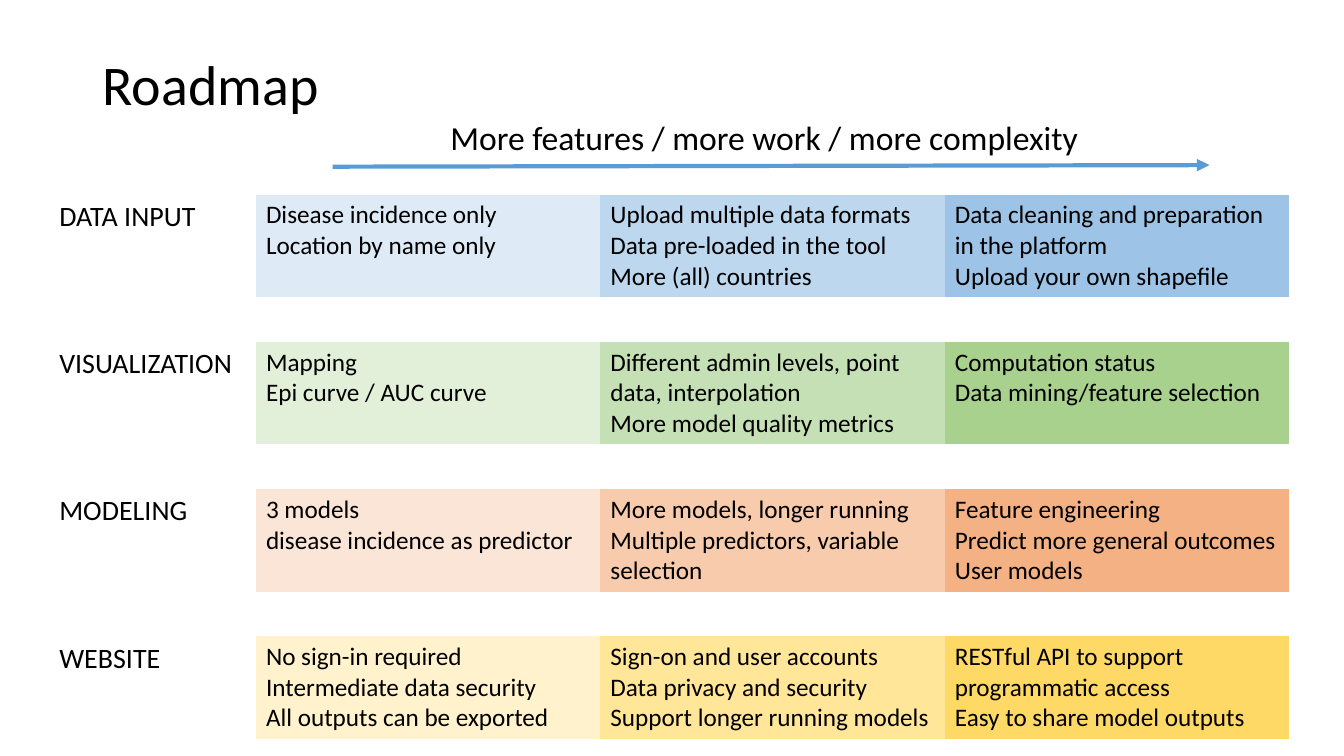
import pptx
import pptx.dml.color
import pptx.enum.shapes
import pptx.enum.text
import pptx.oxml.ns
import pptx.util
from lxml import etree

Cm, Pt = pptx.util.Cm, pptx.util.Pt
qn = pptx.oxml.ns.qn

# Content: label, then (fill, paragraphs) for each stage; \n is a line break
TITLE = "Roadmap"
ARROW_LABEL = "More features / more work / more complexity"
TRACKS = [
    ("DATA INPUT", [
        ("DEEBF7", ["Disease incidence only", "Location by name only"]),
        ("BDD7EE", ["Upload multiple data formats", "Data pre-loaded in the tool",
                    "More (all) countries"]),
        ("9DC3E6", ["Data cleaning and preparation in the platform",
                    "Upload your own shapefile"]),
    ]),
    ("VISUALIZATION", [
        ("E2F0D9", ["Mapping", "Epi curve / AUC curve"]),
        ("C5E0B4", ["Different admin levels, point data, interpolation",
                    "More model quality metrics"]),
        ("A9D18E", ["Computation status", "Data mining/feature selection"]),
    ]),
    ("MODELING", [
        ("FBE5D6", ["3 models\ndisease incidence as predictor"]),
        ("F8CBAD", ["More models, longer running",
                    "Multiple predictors, variable selection"]),
        ("F4B183", ["Feature engineering", "Predict more general outcomes",
                    "User models"]),
    ]),
    ("WEBSITE", [
        ("FFF2CC", ["No sign-in required", "Intermediate data security",
                    "All outputs can be exported"]),
        ("FFE699", ["Sign-on and user accounts", "Data privacy and security",
                    "Support longer running models"]),
        ("FFD966", ["RESTful API to support programmatic access",
                    "Easy to share model outputs"]),
    ]),
]

# Layout in cm
TABLE_LEFT, TABLE_TOP = 1.24, 4.91
LABEL_W, STAGE_W, STAGES = 5.21, 8.68, 3
TRACK_H, GAP_H = 2.58, 1.13
NO_STYLE = "{2D5ABB26-0587-4C30-8999-92F81FD0307C}"


def color(value):
    return pptx.dml.color.RGBColor.from_string(value)


def write(tf, paragraphs, size):
    for i, text in enumerate(paragraphs):
        p = tf.add_paragraph() if i else tf.paragraphs[0]
        for j, line in enumerate(text.split("\n")):
            if j:
                p.add_line_break()
            r = p.add_run()
            r.text = line
            r.font.name = "Calibri"
            r.font.size = Pt(size)
            r.font.color.rgb = color("000000")


def add_text(s, left, top, width, height, text, size):
    tf = s.shapes.add_textbox(Cm(left), Cm(top), Cm(width), Cm(height)).text_frame
    tf.word_wrap = True
    write(tf, [text], size)
    return tf


def add_arrow(s):
    arrow = s.shapes.add_connector(pptx.enum.shapes.MSO_CONNECTOR.STRAIGHT,
                                   Cm(8.38), Cm(4.2), Cm(30.48), Cm(4.16))
    arrow.line.color.rgb = color("5B9BD5")
    arrow.line.width = Pt(3)
    etree.SubElement(arrow.line._get_or_add_ln(), qn("a:tailEnd"), type="triangle")
    etree.SubElement(arrow._element.spPr, qn("a:effectLst"))


def add_tracks(s):
    rows = 2 * len(TRACKS) - 1
    widths = [LABEL_W] + [STAGE_W] * STAGES
    heights = [GAP_H if i % 2 else TRACK_H for i in range(rows)]
    table = s.shapes.add_table(rows, len(widths), Cm(TABLE_LEFT), Cm(TABLE_TOP),
                               Cm(sum(widths)), Cm(sum(heights))).table
    table.first_row = table.horz_banding = False
    table._tbl.tblPr.find(qn("a:tableStyleId")).text = NO_STYLE
    for column, width in zip(table.columns, widths):
        column.width = Cm(width)
    for row, height in zip(table.rows, heights):
        row.height = Cm(height)
    for cell in table.iter_cells():
        cell.fill.background()

    # Tracks fill every other row; the rows between are gaps
    for i, (label, stages) in enumerate(TRACKS):
        write(table.cell(2 * i, 0).text_frame, [label], 20)
        for j, (fill, paragraphs) in enumerate(stages, start=1):
            cell = table.cell(2 * i, j)
            cell.fill.solid()
            cell.fill.fore_color.rgb = color(fill)
            write(cell.text_frame, paragraphs, 18)


def main():
    prs = pptx.Presentation()
    prs.slide_width, prs.slide_height = Cm(33.87), Cm(19.05)
    s = prs.slides.add_slide(prs.slide_layouts[6])

    # Title
    tf = add_text(s, 2.34, 1.02, 7.16, 2.36, TITLE, 40)
    tf.vertical_anchor = pptx.enum.text.MSO_ANCHOR.MIDDLE
    tf.paragraphs[0].line_spacing = 0.9

    # Table and complexity arrow
    add_tracks(s)
    add_arrow(s)
    tf = add_text(s, 11.1, 2.82, 16.46, 1.27, ARROW_LABEL, 24)
    tf.word_wrap = False
    tf.auto_size = pptx.enum.text.MSO_AUTO_SIZE.SHAPE_TO_FIT_TEXT

    prs.save("out.pptx")


if __name__ == "__main__":
    main()
